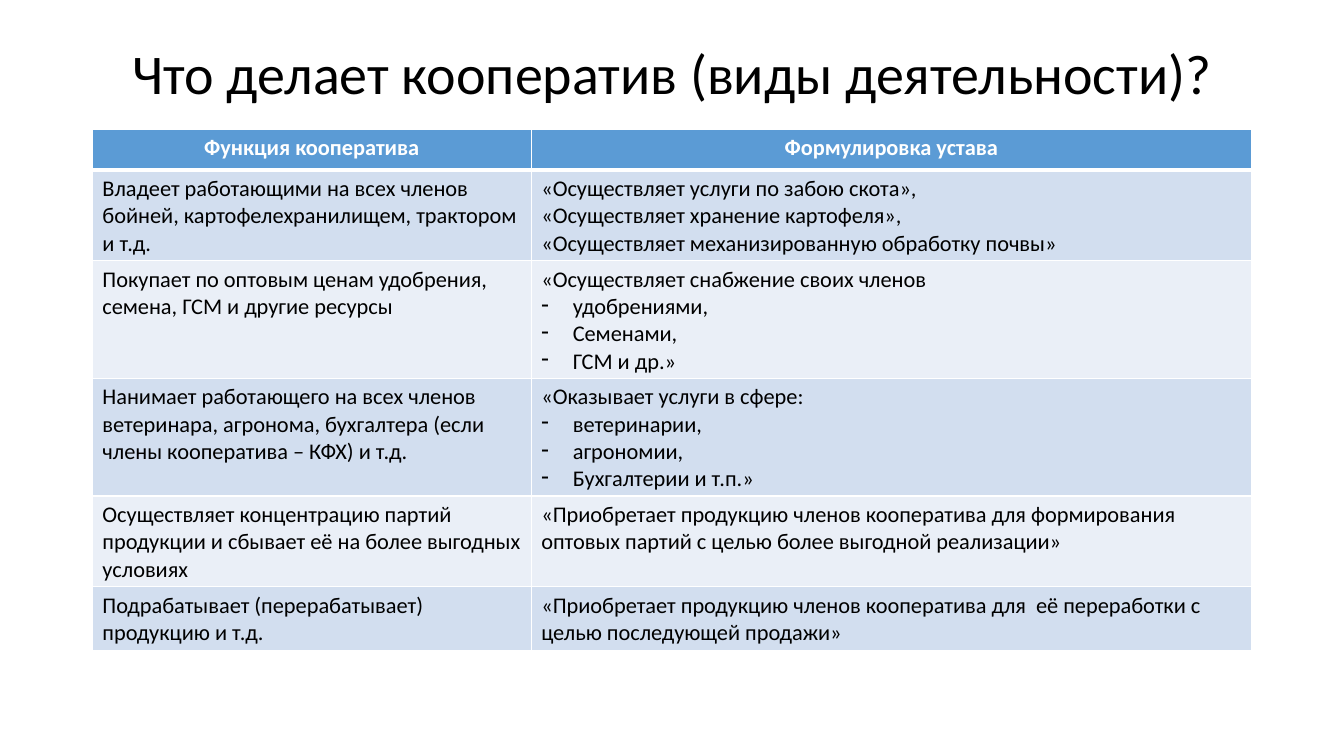
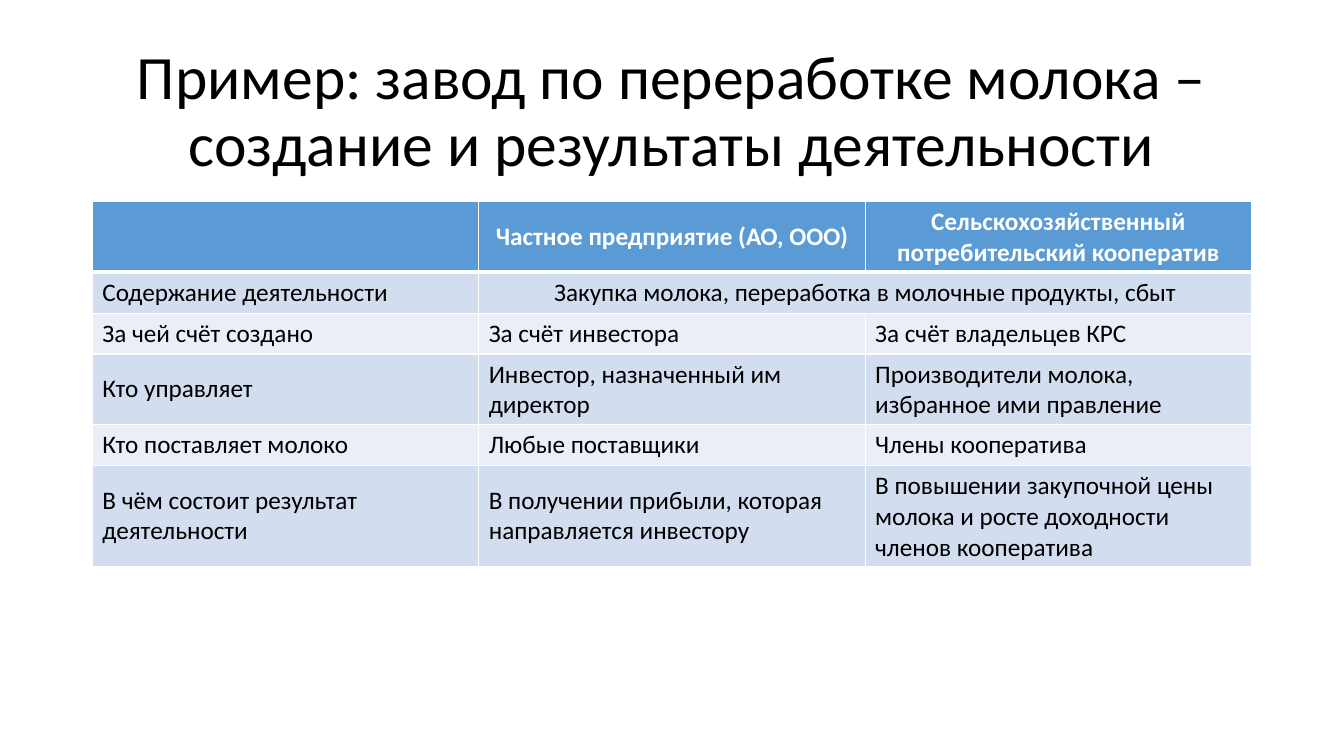
from dataclasses import dataclass
from lxml import etree
from pptx import Presentation
from pptx.dml.color import RGBColor
from pptx.enum.text import MSO_ANCHOR, PP_ALIGN
from pptx.oxml.ns import qn
from pptx.util import Pt

CENTER, LEFT = PP_ALIGN.CENTER, PP_ALIGN.LEFT
TOP, MIDDLE = MSO_ANCHOR.TOP, MSO_ANCHOR.MIDDLE
BLANK_LAYOUT = 6
PX = 9525


@dataclass(frozen=True)
class Theme:
    font: str = "Calibri"
    text: str = "000000"
    header_text: str = "FFFFFF"
    header_fill: str = "5B9BD5"
    bands: tuple = ("D2DEEF", "EAEFF7")
    border: str = "FFFFFF"
    thin: int = 1
    thick: int = 3
    title_spacing: float = 0.9


THEME = Theme()
PAGE_WIDTH, PAGE_HEIGHT = 1280, 720
MARGIN, TITLE_TOP, BULLET_INDENT = 88, 38, 30
CONTENT_WIDTH = PAGE_WIDTH - 2 * MARGIN
DASH = "- "

SLIDES = [
    {
        "title": "Что делает кооператив (виды деятельности)?",
        "title_size": 40,
        "title_height": 69,
        "table_top": 123,
        "text_size": 16,
        "anchor": TOP,
        "columns": [418, 686],
        "heights": [39, 86, 112, 112, 86, 60],
        "merged": [],
        "rows": [
            ["Функция кооператива", "Формулировка устава"],
            ["Владеет работающими на всех членов бойней, картофелехранилищем, трактором и т.д.",
             "«Осуществляет услуги по забою скота»,\n"
             "«Осуществляет хранение картофеля»,\n"
             "«Осуществляет механизированную обработку почвы»"],
            ["Покупает по оптовым ценам удобрения, семена, ГСМ и другие ресурсы",
             "«Осуществляет снабжение своих членов\n- удобрениями,\n- Семенами,\n- ГСМ и др.»"],
            ["Нанимает работающего на всех членов ветеринара, агронома, бухгалтера "
             "(если члены кооператива – КФХ) и т.д.",
             "«Оказывает услуги в сфере:\n- ветеринарии,\n- агрономии,\n- Бухгалтерии и т.п.»"],
            ["Осуществляет концентрацию партий продукции и сбывает её на более выгодных условиях",
             "«Приобретает продукцию членов кооператива для формирования оптовых партий "
             "с целью более выгодной реализации»"],
            ["Подрабатывает (перерабатывает) продукцию и т.д.",
             "«Приобретает продукцию членов кооператива для  её переработки "
             "с целью последующей продажи»"],
        ],
    },
    {
        "title": "Пример: завод по переработке молока – создание и результаты деятельности",
        "title_size": 44,
        "title_height": 139,
        "table_top": 192,
        "text_size": 18,
        "anchor": MIDDLE,
        "columns": [CONTENT_WIDTH // 3] * 3,
        "heights": [57] + [39] * 5,
        "merged": [((1, 1), (1, 2))],
        "rows": [
            ["", "Частное предприятие (АО, ООО)", "Сельскохозяйственный потребительский кооператив"],
            ["Содержание деятельности", "Закупка молока, переработка в молочные продукты, сбыт", ""],
            ["За чей счёт создано", "За счёт инвестора", "За счёт владельцев КРС"],
            ["Кто управляет", "Инвестор, назначенный им директор",
             "Производители молока, избранное ими правление"],
            ["Кто поставляет молоко", "Любые поставщики", "Члены кооператива"],
            ["В чём состоит результат деятельности",
             "В получении прибыли, которая направляется инвестору",
             "В повышении закупочной цены молока и росте доходности членов кооператива"],
        ],
    },
]


def px(*lengths):
    return [round(length * PX) for length in lengths]


def style_para(para, size, color, bold=False, align=LEFT):
    para.alignment = align
    for span in para.runs:
        span.font.name = THEME.font
        span.font.size = Pt(size)
        span.font.bold = bold
        span.font.color.rgb = RGBColor.from_string(color)


def add_dash(para):
    properties = para._p.get_or_add_pPr()
    indent = BULLET_INDENT * PX
    properties.set("marL", str(indent))
    properties.set("indent", str(-indent))
    etree.SubElement(properties, qn("a:buChar"), char="-")


def set_borders(cell, row):
    widths = {
        "lnL": THEME.thin,
        "lnR": THEME.thin,
        "lnT": THEME.thick if row == 1 else THEME.thin,
        "lnB": THEME.thick if row == 0 else THEME.thin,
    }
    properties = cell._tc.get_or_add_tcPr()
    for position, (side, width) in enumerate(widths.items()):
        line = etree.Element(qn(f"a:{side}"), w=str(Pt(width)))
        fill = etree.SubElement(line, qn("a:solidFill"))
        etree.SubElement(fill, qn("a:srgbClr"), val=THEME.border)
        properties.insert(position, line)


def add_title(page, content):
    box = page.shapes.add_textbox(*px(MARGIN, TITLE_TOP, CONTENT_WIDTH, content["title_height"]))
    frame = box.text_frame
    frame.word_wrap = True
    frame.vertical_anchor = MIDDLE
    frame.text = content["title"]
    para = frame.paragraphs[0]
    para.line_spacing = THEME.title_spacing
    style_para(para, content["title_size"], THEME.text, align=CENTER)


def fill_cell(cell, text, row, content):
    header = row == 0
    color = THEME.header_fill if header else THEME.bands[(row - 1) % 2]
    cell.fill.solid()
    cell.fill.fore_color.rgb = RGBColor.from_string(color)
    cell.vertical_anchor = content["anchor"]
    set_borders(cell, row)
    cell.text_frame.text = text
    for para in cell.text_frame.paragraphs:
        dashed = para.text.startswith(DASH)
        if dashed:
            para.text = para.text.removeprefix(DASH)
        style_para(
            para,
            content["text_size"],
            THEME.header_text if header else THEME.text,
            bold=header,
            align=CENTER if header or cell.is_merge_origin else LEFT,
        )
        if dashed:
            add_dash(para)


def add_grid(page, content):
    rows, columns, heights = content["rows"], content["columns"], content["heights"]
    place = px(MARGIN, content["table_top"], CONTENT_WIDTH, sum(heights))
    table = page.shapes.add_table(len(rows), len(columns), *place).table
    table.first_row = False
    table.horz_banding = False
    for column, width in zip(table.columns, px(*columns)):
        column.width = width
    for row, height in zip(table.rows, px(*heights)):
        row.height = height
    for first, last in content["merged"]:
        table.cell(*first).merge(table.cell(*last))
    for row, texts in enumerate(rows):
        for column, text in enumerate(texts):
            fill_cell(table.cell(row, column), text, row, content)


def main():
    deck = Presentation()
    deck.slide_width, deck.slide_height = px(PAGE_WIDTH, PAGE_HEIGHT)
    for content in SLIDES:
        page = deck.slides.add_slide(deck.slide_layouts[BLANK_LAYOUT])
        add_title(page, content)
        add_grid(page, content)
    deck.save("out.pptx")


if __name__ == "__main__":
    main()
